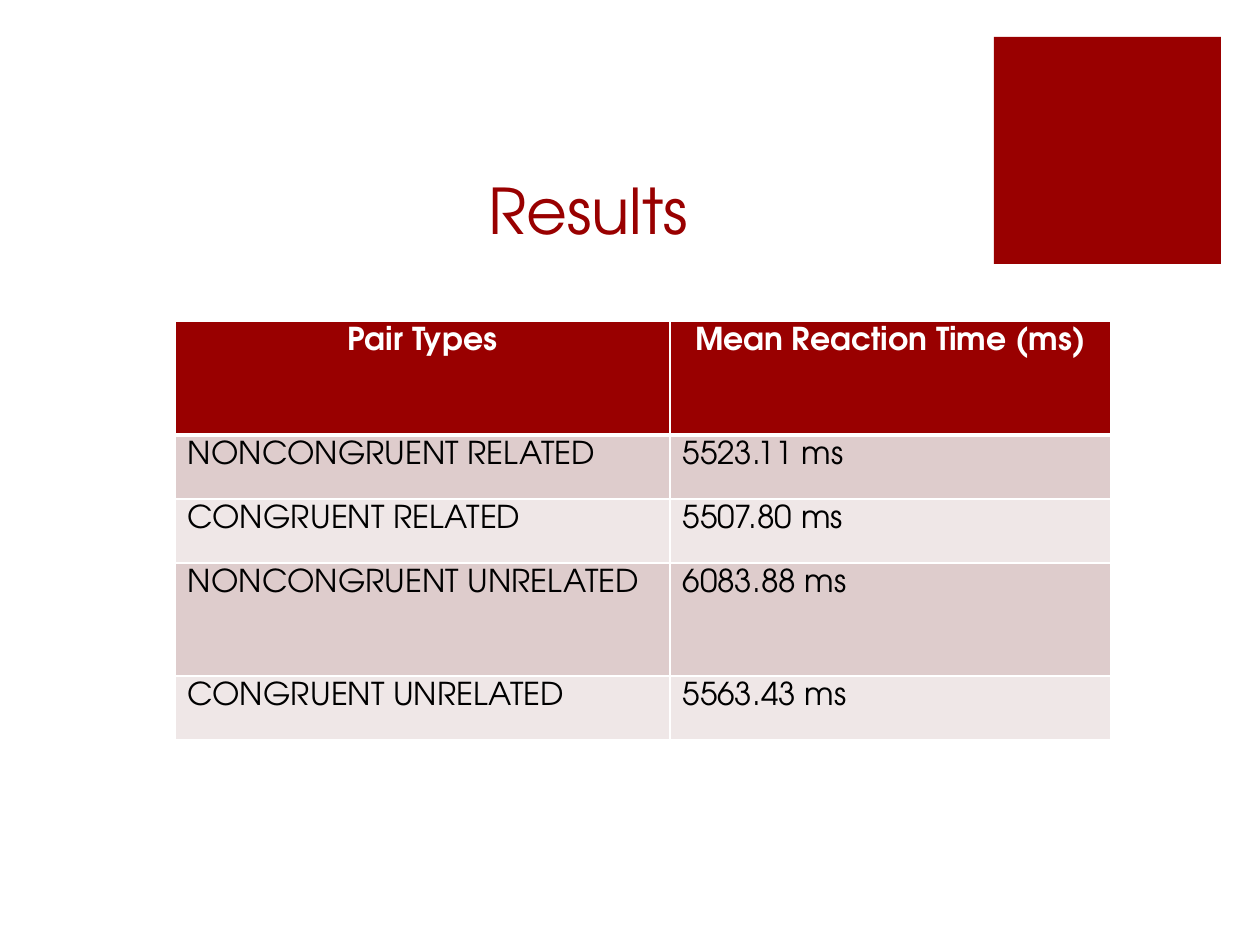
from lxml import etree
from pptx import Presentation
from pptx.dml.color import RGBColor
from pptx.enum.shapes import MSO_SHAPE
from pptx.enum.text import MSO_ANCHOR, PP_ALIGN
from pptx.oxml.ns import qn
from pptx.util import Pt

PX = 914400 // 126
RECTANGLE = MSO_SHAPE.RECTANGLE
BOTTOM = MSO_ANCHOR.BOTTOM
LEFT, CENTER = PP_ALIGN.LEFT, PP_ALIGN.CENTER
TITLE_ONLY_LAYOUT = 5

FONT = "TeX Gyre Adventor"
RED, WHITE, BLACK = "990000", "FFFFFF", "000000"
BANDS = ("DECCCC", "EFE7E7")
COLUMN_WIDTHS = (495, 441)
ROW_HEIGHTS = (114, 64, 64, 113, 64)
ROWS = (
    ("Pair Types", "Mean Reaction Time (ms)"),
    ("NONCONGRUENT RELATED", "5523.11 ms"),
    ("CONGRUENT RELATED", "5507.80 ms"),
    ("NONCONGRUENT UNRELATED", "6083.88 ms"),
    ("CONGRUENT UNRELATED", "5563.43 ms"),
)


def px(*lengths):
    return [length * PX for length in lengths]


def color(hex_code):
    return RGBColor.from_string(hex_code)


def format_paragraph(paragraph, size, hex_code, alignment, bold=False):
    paragraph.alignment = alignment
    font = paragraph.font
    font.name, font.size, font.bold = FONT, Pt(size), bold
    font.color.rgb = color(hex_code)


def add_square(slide, left, top, side):
    shape = slide.shapes.add_shape(RECTANGLE, *px(left, top, side, side))
    shape.shadow.inherit = False
    shape.fill.solid()
    shape.fill.fore_color.rgb = color(RED)
    shape.line.fill.background()


def set_title(slide, text):
    title = slide.shapes.title
    title.left, title.top, title.width, title.height = px(93, 96, 866, 157)
    frame = title.text_frame
    frame.text = text
    frame.vertical_anchor = BOTTOM
    # The wide left margin centres the title to the right of the box's middle.
    frame.margin_left, = px(137)
    format_paragraph(frame.paragraphs[0], 36, RED, CENTER)


def set_borders(cell, widths):
    """Draw white borders; widths are points for left, right, top, bottom."""
    properties = cell._tc.get_or_add_tcPr()
    for index, (side, width) in enumerate(zip("LRTB", widths)):
        line = etree.Element(qn(f"a:ln{side}"), w=str(Pt(width)))
        fill = etree.SubElement(line, qn("a:solidFill"))
        etree.SubElement(fill, qn("a:srgbClr"), val=WHITE)
        properties.insert(index, line)


def fill_cell(cell, text, row):
    header = row == 0
    cell.text = text
    cell.fill.solid()
    cell.fill.fore_color.rgb = color(RED if header else BANDS[(row - 1) % 2])
    set_borders(cell, (1, 1, 3 if row == 1 else 1, 3 if header else 1))
    format_paragraph(cell.text_frame.paragraphs[0], 18,
                     WHITE if header else BLACK,
                     CENTER if header else LEFT, header)


def add_results_table(slide, left, top):
    table = slide.shapes.add_table(
        len(ROWS), len(COLUMN_WIDTHS),
        *px(left, top, sum(COLUMN_WIDTHS), sum(ROW_HEIGHTS))).table
    for column, width in zip(table.columns, px(*COLUMN_WIDTHS)):
        column.width = width
    for row, height in zip(table.rows, px(*ROW_HEIGHTS)):
        row.height = height
    for row, texts in enumerate(ROWS):
        for column, text in enumerate(texts):
            fill_cell(table.cell(row, column), text, row)


def main():
    presentation = Presentation()
    presentation.slide_width, presentation.slide_height = px(1260, 945)
    layout = presentation.slide_layouts[TITLE_ONLY_LAYOUT]
    slide = presentation.slides.add_slide(layout)
    add_square(slide, 994, 37, 227)
    set_title(slide, "Results")
    add_results_table(slide, 175, 321)
    presentation.save("out.pptx")


if __name__ == "__main__":
    main()
